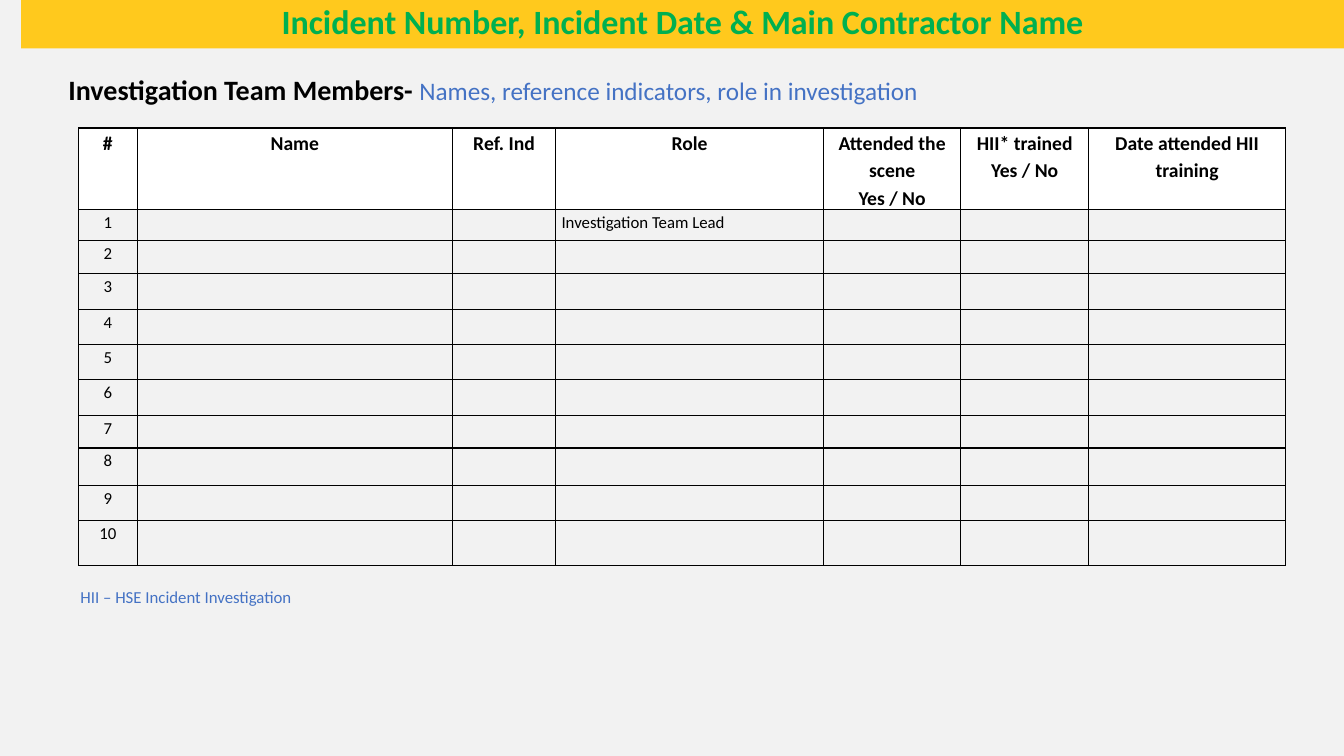
from dataclasses import dataclass
from lxml import etree
from pptx import Presentation
from pptx.dml.color import RGBColor
from pptx.enum.text import MSO_ANCHOR, MSO_AUTO_SIZE, PP_ALIGN
from pptx.oxml.ns import qn
from pptx.util import Inches, Pt

CENTER, LEFT = PP_ALIGN.CENTER, PP_ALIGN.LEFT
MIDDLE, TOP = MSO_ANCHOR.MIDDLE, MSO_ANCHOR.TOP
NO_AUTOFIT = MSO_AUTO_SIZE.NONE


@dataclass(frozen=True)
class Theme:
    font: str = "Calibri"
    background: str = "F2F2F2"
    banner: str = "FFC91D"
    title: str = "00B050"
    ink: str = "000000"
    accent: str = "4472C4"
    header: str = "FFFFFF"
    title_size: float = 24.3
    heading_size: float = 20
    subheading_size: float = 18
    header_size: float = 14
    body_size: float = 12


THEME = Theme()


def add_run(paragraph, text, size, color, bold=False):
    run = paragraph.add_run()
    run.text = text
    run.font.name = THEME.font
    run.font.size = Pt(size)
    run.font.bold = bold
    run.font.color.rgb = RGBColor.from_string(color)


def add_borders(cell):
    properties = cell._tc.get_or_add_tcPr()
    for position, side in enumerate(("a:lnL", "a:lnR", "a:lnT", "a:lnB")):
        line = etree.Element(qn(side), w=str(Pt(1)))
        fill = etree.SubElement(line, qn("a:solidFill"))
        etree.SubElement(fill, qn("a:srgbClr"), val=THEME.ink)
        properties.insert(position, line)


presentation = Presentation()
presentation.slide_width = Inches(13.33)
presentation.slide_height = Inches(7.5)
slide = presentation.slides.add_slide(presentation.slide_layouts[5])
slide.background.fill.solid()
slide.background.fill.fore_color.rgb = RGBColor.from_string(THEME.background)

title = slide.shapes.title
title.left, title.top = Inches(0.21), Inches(-0.02)
title.width, title.height = Inches(13.12), Inches(0.5)
title.fill.solid()
title.fill.fore_color.rgb = RGBColor.from_string(THEME.banner)
frame = title.text_frame
frame.auto_size = NO_AUTOFIT
frame.vertical_anchor = MIDDLE
frame.margin_top = frame.margin_bottom = 0
paragraph = frame.paragraphs[0]
paragraph.alignment = CENTER
paragraph.line_spacing = 0.9
add_run(paragraph, "Incident Number, Incident Date & Main Contractor Name",
        THEME.title_size, THEME.title, True)

heading = slide.shapes.add_textbox(Inches(0.58), Inches(0.67), Inches(10.37), Inches(0.44))
heading.text_frame.word_wrap = True
paragraph = heading.text_frame.paragraphs[0]
add_run(paragraph, "Investigation Team Members- ", THEME.heading_size, THEME.ink, True)
add_run(paragraph, "Names, reference indicators, role in investigation",
        THEME.subheading_size, THEME.accent)

headers = ["#", "Name", "Ref. Ind", "Role", "Attended the scene\nYes / No",
           "HII* trained\nYes / No", "Date attended HII training"]
column_widths = [0.58, 3.13, 1.02, 2.66, 1.36, 1.27, 1.95]
row_heights = [0.8, 0.31, 0.33, 0.36, 0.34, 0.35, 0.36, 0.32, 0.37, 0.35, 0.45]
member_rows = [[str(number)] + [""] * 6 for number in range(1, len(row_heights))]
member_rows[0][3] = "Investigation Team Lead"

table = slide.shapes.add_table(
    len(row_heights), len(headers), Inches(0.78), Inches(1.27),
    Inches(sum(column_widths)), Inches(sum(row_heights))).table
table.first_row = table.horz_banding = False
for column, width in zip(table.columns, column_widths):
    column.width = Inches(width)
for row, height in zip(table.rows, row_heights):
    row.height = Inches(height)

for row_index, texts in enumerate([headers] + member_rows):
    is_header = row_index == 0
    size = THEME.header_size if is_header else THEME.body_size
    for column_index, text in enumerate(texts):
        cell = table.cell(row_index, column_index)
        cell.margin_left = cell.margin_right = Inches(0.06)
        cell.margin_top = cell.margin_bottom = 0
        cell.vertical_anchor = TOP
        if is_header:
            cell.fill.solid()
            cell.fill.fore_color.rgb = RGBColor.from_string(THEME.header)
        else:
            cell.fill.background()
        add_borders(cell)
        if not text:
            continue
        frame = cell.text_frame
        for line_index, line in enumerate(text.split("\n")):
            paragraph = frame.add_paragraph() if line_index else frame.paragraphs[0]
            paragraph.alignment = CENTER if is_header or column_index == 0 else LEFT
            paragraph.line_spacing = 1.15
            add_run(paragraph, line, size, THEME.ink, is_header)

footnote = slide.shapes.add_textbox(Inches(0.7), Inches(5.77), Inches(2.37), Inches(0.3))
footnote.text_frame.word_wrap = False
add_run(footnote.text_frame.paragraphs[0], "HII – HSE Incident Investigation",
        THEME.body_size, THEME.accent)

presentation.save("out.pptx")
